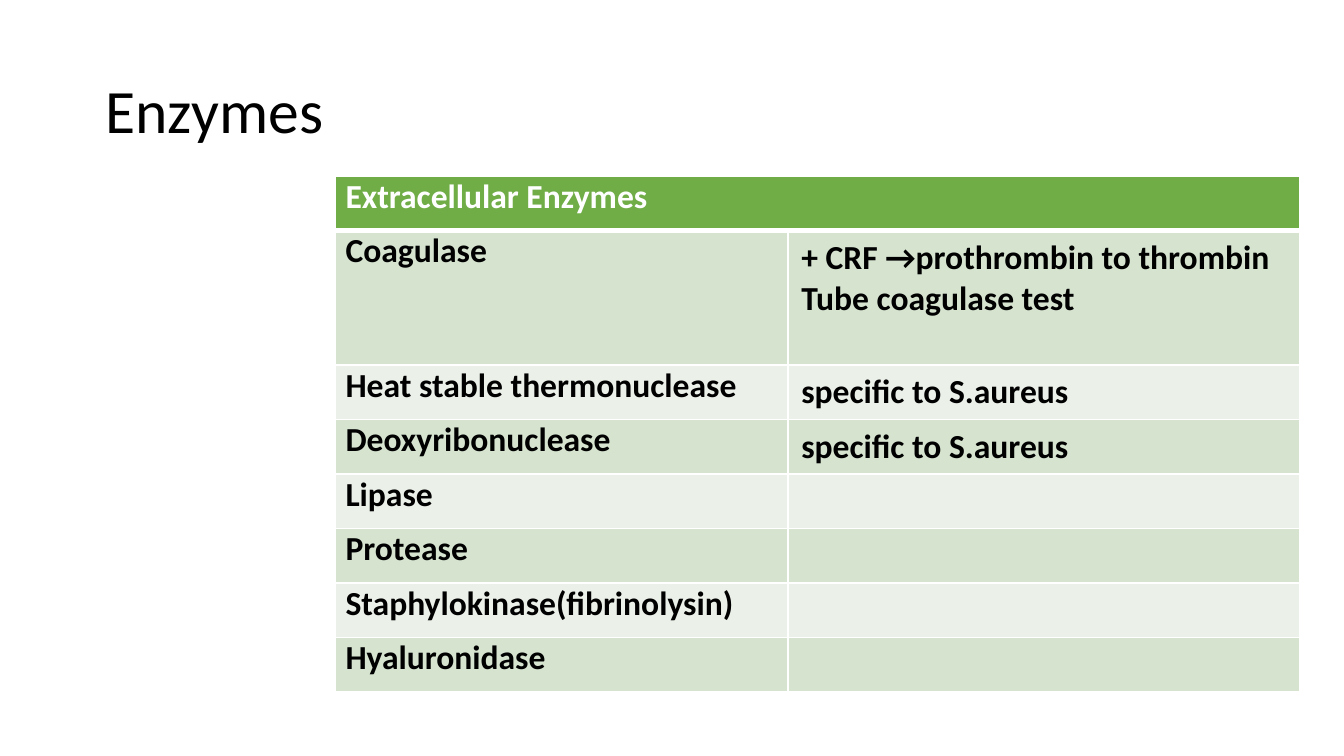
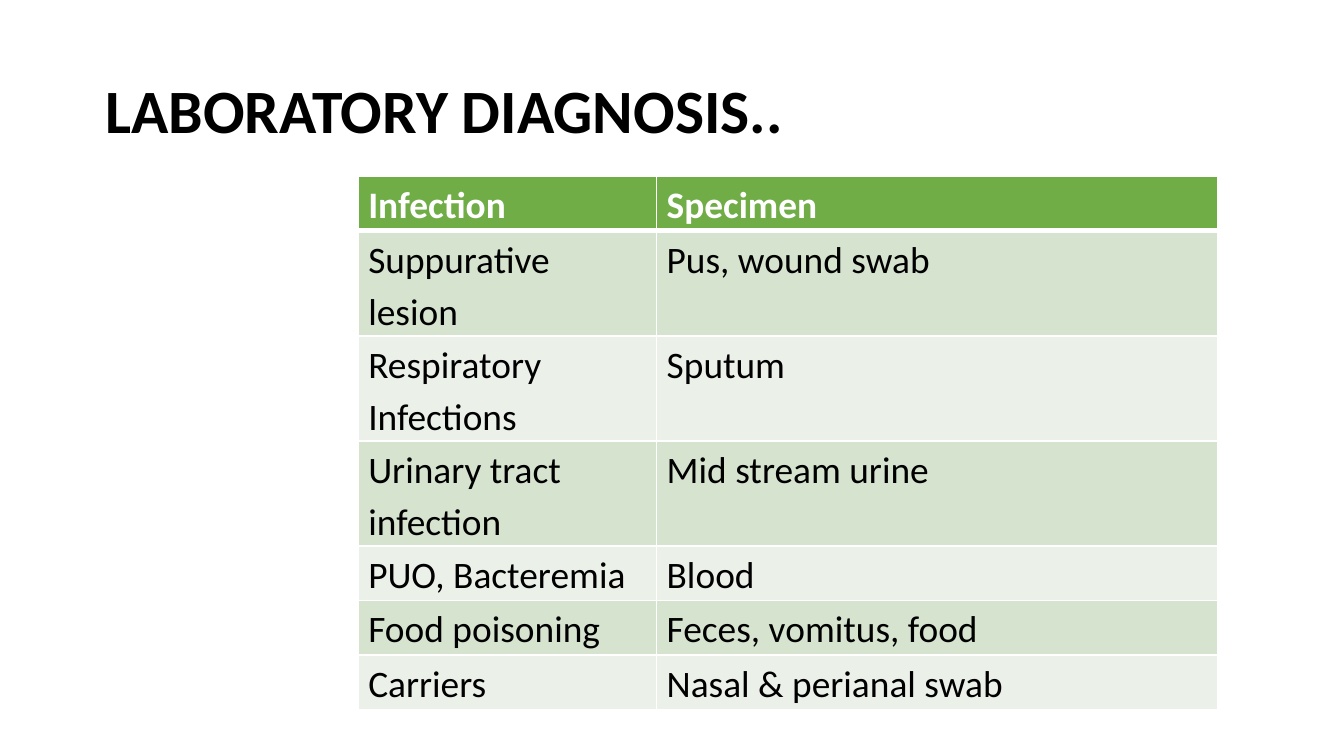
"""Build two slides that each pair a title with a banded green table."""
from dataclasses import dataclass

from lxml import etree
from pptx import Presentation, util as u
from pptx.dml.color import RGBColor
from pptx.enum import text
from pptx.oxml.ns import qn

FONT = "Calibri"
HUES = {"head": "70AD47", "odd": "D5E3CF", "even": "EBF1E9",
        "ink": "000000", "paper": "FFFFFF"}
ROW = 1.03
TOP = 3.33


@dataclass
class Topic:
    title: str
    strong: bool
    left: float
    cols: tuple[float, ...]
    tall: dict[int, float]
    high: float
    size: int
    bold: bool
    space: float
    tight: tuple[int, ...]
    rows: list[tuple[str, ...]]


TOPICS = [
    Topic("Enzymes", False, 6.34, (8.55, 9.68), {1: 2.54}, 9.75, 18, True, 1.0, (0,), [
        ("Extracellular Enzymes",),
        ("Coagulase", "+ CRF →prothrombin to thrombin\nTube coagulase test"),
        ("Heat stable thermonuclease", "specific to S.aureus"),
        ("Deoxyribonuclease", "specific to S.aureus"),
        ("Lipase", ""),
        ("Protease", ""),
        ("Staphylokinase(fibrinolysin)", ""),
        ("Hyaluronidase", ""),
    ]),
    Topic("LABORATORY DIAGNOSIS..", True, 6.77, (5.64, 10.6), {}, 9.78, 20, False, 1.15, (0, 1), [
        ("Infection", "Specimen"),
        ("Suppurative lesion", "Pus, wound swab"),
        ("Respiratory Infections", "Sputum"),
        ("Urinary tract infection", "Mid stream urine"),
        ("PUO, Bacteremia", "Blood"),
        ("Food poisoning", "Feces, vomitus, food"),
        ("Carriers", "Nasal & perianal swab"),
    ]),
]


def write(frame, words: str, *, size: int, hue: str = "ink",
          bold: bool = False, space: float = 1.0) -> None:
    """Fill a text frame, one paragraph per line of words."""
    for num, line in enumerate(words.split("\n")):
        para = frame.add_paragraph() if num else frame.paragraphs[0]
        para.alignment = text.PP_ALIGN.LEFT
        para.line_spacing = space
        run = para.add_run()
        run.text = line
        run.font.name = FONT
        run.font.size = u.Pt(size)
        run.font.bold = bold
        run.font.color.rgb = RGBColor.from_string(HUES[hue])


def edge(cell, row: int) -> None:
    """Draw white cell borders, heavy between header and body."""
    props = cell._tc.get_or_add_tcPr()
    heavy = {0: "B", 1: "T"}.get(row)
    for spot, side in enumerate("LRTB"):
        line = etree.Element(qn(f"a:ln{side}"), w=str(u.Pt(3 if side == heavy else 1)))
        fill = etree.SubElement(line, qn("a:solidFill"))
        etree.SubElement(fill, qn("a:srgbClr"), val=HUES["paper"])
        props.insert(spot, line)


def head(slide, topic: Topic) -> None:
    """Place and format the slide title."""
    title = slide.shapes.title
    title.left, title.top = u.Cm(1.74), u.Cm(0.76)
    title.width, title.height = u.Cm(21.9), u.Cm(2.77)
    frame = title.text_frame
    frame.word_wrap = True
    frame.auto_size = text.MSO_AUTO_SIZE.NONE
    frame.vertical_anchor = text.MSO_ANCHOR.MIDDLE
    write(frame, topic.title, size=33, bold=topic.strong, space=0.9)


def grid(slide, topic: Topic) -> None:
    """Draw the table of a topic."""
    frame = slide.shapes.add_table(
        len(topic.rows), len(topic.cols), u.Cm(topic.left), u.Cm(TOP),
        u.Cm(sum(topic.cols)), u.Cm(topic.high))
    table = frame.table
    table.horz_banding = False
    for col, width in zip(table.columns, topic.cols):
        col.width = u.Cm(width)
    for row, words in enumerate(topic.rows):
        table.rows[row].height = u.Cm(topic.tall.get(row, ROW))
        band = "head" if row == 0 else "odd" if row % 2 else "even"
        for col in range(len(topic.cols)):
            cell = table.cell(row, col)
            cell.fill.solid()
            cell.fill.fore_color.rgb = RGBColor.from_string(HUES[band])
            edge(cell, row)
            if col in topic.tight:
                cell.margin_left = cell.margin_right = u.Cm(0.19)
                cell.margin_top = cell.margin_bottom = 0
            if col < len(words) and words[col]:
                write(cell.text_frame, words[col], size=topic.size,
                      hue="ink" if row else "paper",
                      bold=topic.bold or row == 0, space=topic.space)
        if len(words) == 1:
            table.cell(row, 0).merge(table.cell(row, len(topic.cols) - 1))
    frame.height = u.Cm(topic.high)


def main() -> None:
    """Build and save the deck."""
    deck = Presentation()
    deck.slide_width, deck.slide_height = u.Cm(25.4), u.Cm(14.29)
    for topic in TOPICS:
        slide = deck.slides.add_slide(deck.slide_layouts[5])
        slide.background.fill.solid()
        slide.background.fill.fore_color.rgb = RGBColor.from_string(HUES["paper"])
        head(slide, topic)
        grid(slide, topic)
    deck.save("out.pptx")


if __name__ == "__main__":
    main()
